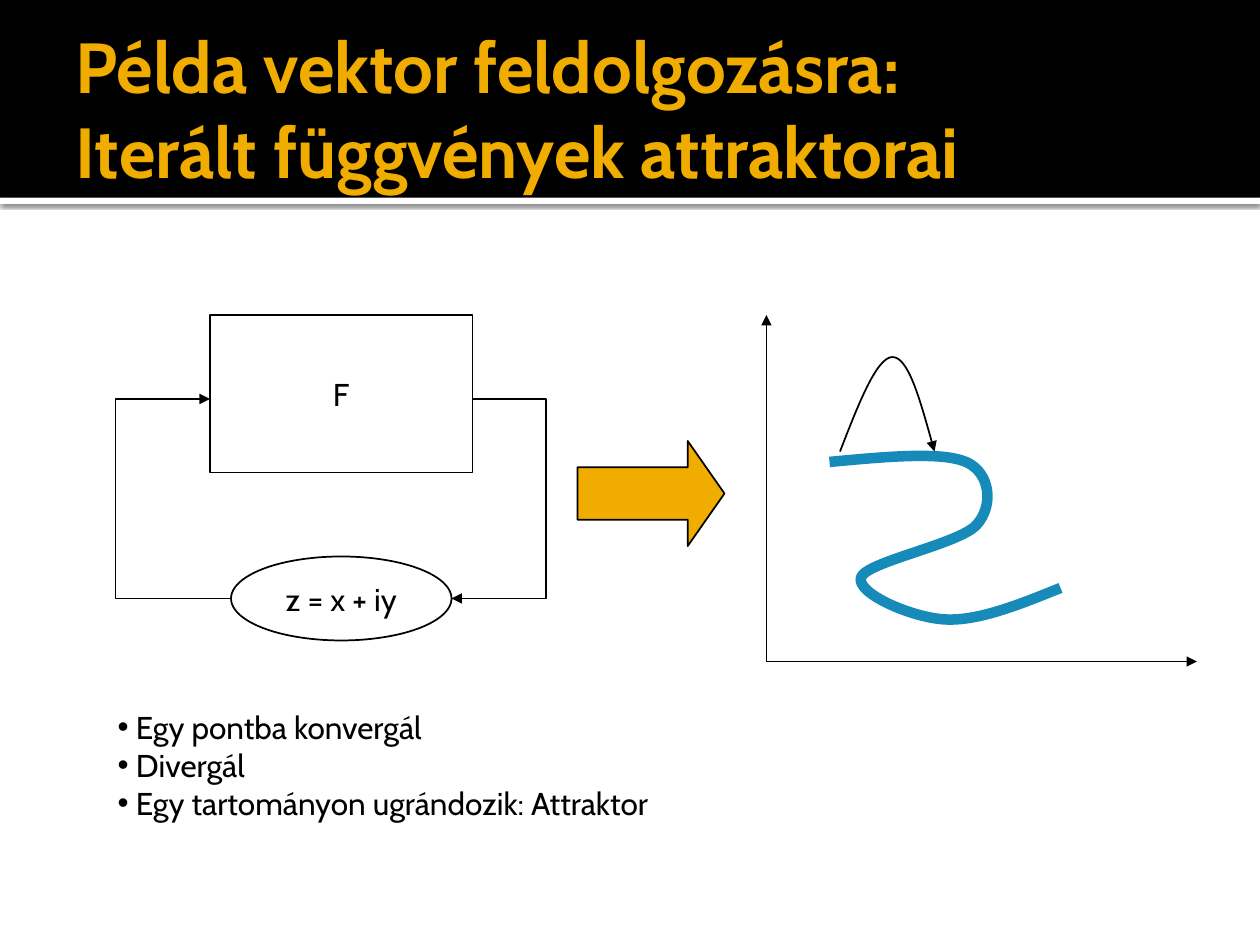
from dataclasses import dataclass

from lxml.etree import SubElement
from pptx import Presentation
from pptx.dml.color import RGBColor
from pptx.enum.shapes import MSO_CONNECTOR, MSO_SHAPE
from pptx.enum.text import MSO_ANCHOR, MSO_AUTO_SIZE, PP_ALIGN
from pptx.oxml.ns import qn
from pptx.util import Pt


@dataclass(frozen=True)
class Theme:
    """Colours, font and sizes of the slide."""
    ink: RGBColor = RGBColor(0, 0, 0)
    paper: RGBColor = RGBColor(255, 255, 255)
    gold: RGBColor = RGBColor(0xF0, 0xAD, 0x00)
    blue: RGBColor = RGBColor(0x16, 0x8B, 0xBA)
    font: str = "Cabin"
    head: float = 40.5
    text: float = 18
    thin: float = 1
    thick: float = 6


THEME = Theme()


def place(shape, left, top, width, height):
    """Set the box of a shape in points."""
    shape.left, shape.top = Pt(left), Pt(top)
    shape.width, shape.height = Pt(width), Pt(height)


def style(para, size, color, align=PP_ALIGN.LEFT):
    """Set the font and alignment of a paragraph."""
    para.font.name, para.font.size = THEME.font, Pt(size)
    para.font.color.rgb = color
    para.alignment = align
    para.space_before = Pt(0)


def stroke(shape, color=THEME.ink, width=THEME.thin, arrow=False):
    """Draw the line of a shape, with an arrowhead at its end if asked."""
    shape.line.color.rgb = color
    shape.line.width = Pt(width)
    if arrow:
        SubElement(shape.line._get_or_add_ln(), qn("a:tailEnd"), type="triangle")


def block(slide, kind, box, fill=None, edge=True, label=""):
    """Add a preset shape with an optional fill, edge and label."""
    shape = slide.shapes.add_shape(kind, *map(Pt, box))
    shape.shadow.inherit = False
    if fill is None:
        shape.fill.background()
    else:
        shape.fill.solid()
        shape.fill.fore_color.rgb = fill
    if edge:
        stroke(shape)
    else:
        shape.line.fill.background()
    if label:
        frame = shape.text_frame
        frame.text = label
        frame.word_wrap = False
        frame.vertical_anchor = MSO_ANCHOR.MIDDLE
        style(frame.paragraphs[0], THEME.text, THEME.ink, PP_ALIGN.CENTER)
    return shape


def trace(slide, left, top, points, curved=False, **line):
    """Add an open outline; a curved one takes three points per Bézier arc."""
    start, *rest = [(Pt(left + x), Pt(top + y)) for x, y in points]
    pen = slide.shapes.build_freeform(*start)
    pen.add_line_segments(rest, close=False)
    shape = pen.convert_to_shape()
    shape.shadow.inherit = False
    shape.fill.background()
    stroke(shape, **line)
    if curved:
        steps = list(shape.element.iter(qn("a:lnTo")))
        track = steps[0].getparent()
        for first in range(0, len(steps), 3):
            arc = SubElement(track, qn("a:cubicBezTo"))
            for step in steps[first:first + 3]:
                arc.append(step[0])
                track.remove(step)


def header(slide, left, top, width, height):
    """Draw the title band, its shaded rim and the title."""
    rim = block(slide, MSO_SHAPE.RECTANGLE, (left, top + height, width, 3.6), THEME.paper, False)
    glow = SubElement(rim.element.spPr.find(qn("a:effectLst")), qn("a:outerShdw"),
                      blurRad=str(Pt(2.5)), dist=str(Pt(0.8)), dir="5400000")
    shade = SubElement(glow, qn("a:srgbClr"), val=str(THEME.ink))
    SubElement(shade, qn("a:alpha"), val="60000")
    block(slide, MSO_SHAPE.RECTANGLE, (left, top, width, height), THEME.ink, False)
    title = slide.shapes.title
    title.element.getparent().append(title.element)
    place(title, left + 36, top + 12.2, width - 72, 98.6)
    frame = title.text_frame
    frame.text = "Példa vektor feldolgozásra:\vIterált függvények attraktorai"
    frame.word_wrap = True
    frame.auto_size = MSO_AUTO_SIZE.NONE
    frame.vertical_anchor = MSO_ANCHOR.MIDDLE
    frame.margin_right = Pt(3.6)
    para = frame.paragraphs[0]
    style(para, THEME.head, THEME.gold)
    para.font.bold = True


def cycle(slide, left, top, width, height):
    """Draw the function F and the value fed back to it."""
    mid, high, low = left + 129, 48, height - 24
    block(slide, MSO_SHAPE.RECTANGLE, (mid - 75, top, 150, 90), label="F")
    block(slide, MSO_SHAPE.OVAL, (mid - 63, top + height - 48, 126, 48), label="z = x + iy")
    trace(slide, left, top, [(66, low), (0, low), (0, high), (54, high)], arrow=True)
    trace(slide, left, top, [(204, high), (width, high), (width, low), (192, low)], arrow=True)


def plot(slide, left, top, width, height):
    """Draw the axes, the attractor curve and one jump along it."""
    base = top + height
    for end in ((left, top), (left + width, base)):
        axis = slide.shapes.add_connector(
            MSO_CONNECTOR.STRAIGHT, *map(Pt, (left, base, *end)))
        stroke(axis, arrow=True)
        SubElement(axis.element.spPr, qn("a:effectLst"))
    trace(slide, left, top, [
        (36, 84), (68, 81), (100, 78), (114, 84),
        (128, 90), (130, 109), (120, 120),
        (110, 131), (57, 141), (54, 150),
        (51, 159), (83, 173), (102, 174),
        (121, 175), (144.5, 165.5), (168, 156),
    ], curved=True, color=THEME.blue, width=THEME.thick)
    trace(slide, left, top, [
        (42, 78), (52.5, 51), (63, 24), (72, 24),
        (81, 24), (88.5, 51), (96, 78),
    ], curved=True, arrow=True)


def notes(slide, left, top, width, height):
    """Fill the list of possible outcomes."""
    body = slide.placeholders[1]
    body.element.getparent().append(body.element)
    place(body, left, top, width, height)
    frame = body.text_frame
    frame.text = "Egy pontba konvergál\nDivergál\nEgy tartományon ugrándozik: Attraktor"
    frame.word_wrap = False
    frame.auto_size = MSO_AUTO_SIZE.NONE
    for para in frame.paragraphs:
        style(para, THEME.text, THEME.ink)
        props = para._p.get_or_add_pPr()
        props.set("marL", str(Pt(10.5)))
        props.set("indent", str(-Pt(10.5)))


def main():
    """Build and save the slide."""
    deck = Presentation()
    deck.slide_width, deck.slide_height = Pt(720), Pt(540)
    slide = deck.slides.add_slide(deck.slide_layouts[1])
    header(slide, 0, 0, 720, 113)
    cycle(slide, 66, 180, 246, 186)
    plot(slide, 438, 180, 246, 198)
    arrow = block(slide, MSO_SHAPE.RIGHT_ARROW, (330, 252, 84, 60), THEME.gold)
    arrow.adjustments[1] = 0.35
    notes(slide, 60, 401, 321, 73)
    deck.save("out.pptx")


if __name__ == "__main__":
    main()
